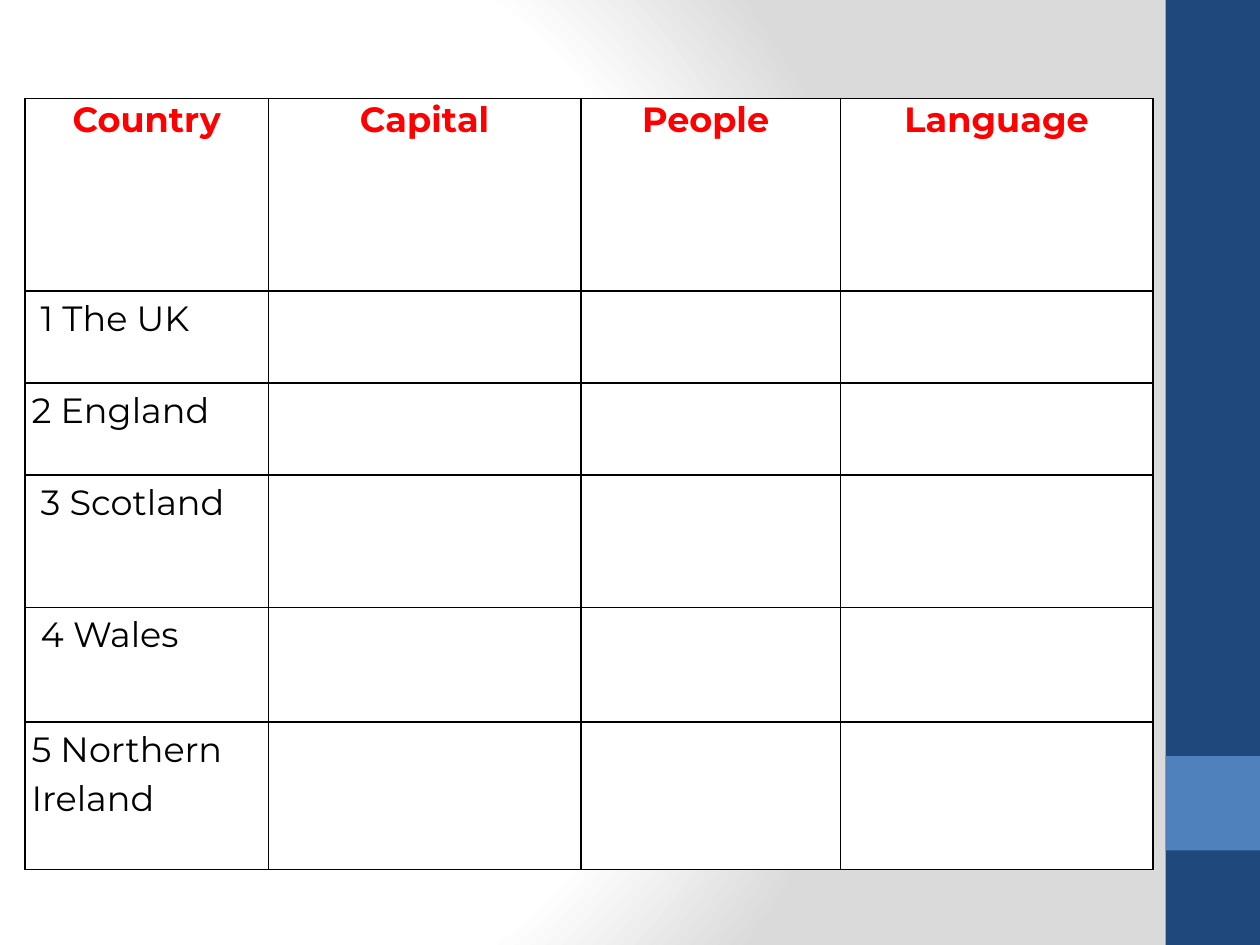
"""Build a slide with a table of countries to fill in."""
from lxml import etree
from pptx import Presentation
from pptx.dml.color import RGBColor
from pptx.enum.shapes import MSO_SHAPE
from pptx.enum.text import PP_ALIGN
from pptx.oxml import parse_xml
from pptx.oxml.ns import nsdecls, qn
from pptx.util import Inches, Pt

RECT = MSO_SHAPE.RECTANGLE
CENTER = PP_ALIGN.CENTER
LEFT = PP_ALIGN.LEFT

FONT = "Montserrat"
HEADS = ["Country", "Capital", "People ", "Language"]
LANDS = [" 1 The UK", "2 England", " 3 Scotland", " 4 Wales", "5 Northern Ireland"]
COLS = [1.93, 2.48, 2.06, 2.48]
ROWS = [1.53, 0.73, 0.73, 1.05, 0.91, 1.17]
BARS = [(0, 7.5, "1F497D"), (6, 0.75, "4F81BD")]
STOPS = [(0, "FFFFFF"), (75, "FFFFFF"), (100, "DADADA")]
SIDES = ["lnL", "lnR", "lnT", "lnB"]


def paint(fill, color):
    fill.solid()
    fill.fore_color.rgb = RGBColor.from_string(color)


def shade(slide):
    slide.background.fill.gradient()
    grad = slide.element.find(".//" + qn("a:gradFill"))
    stops = "".join(
        f'<a:gs pos="{pos * 1000}"><a:srgbClr val="{color}"/></a:gs>' for pos, color in STOPS
    )
    new = parse_xml(
        f'<a:gradFill {nsdecls("a")} rotWithShape="1"><a:gsLst>{stops}</a:gsLst>'
        '<a:path path="circle"><a:fillToRect l="20000" t="50000" r="100000" b="50000"/>'
        "</a:path></a:gradFill>"
    )
    grad.getparent().replace(grad, new)


def add_bar(slide, top, height, color):
    bar = slide.shapes.add_shape(RECT, Inches(9.25), Inches(top), Inches(0.75), Inches(height))
    bar.shadow.inherit = False
    paint(bar.fill, color)
    bar.line.fill.background()


def edge(cell):
    props = cell._tc.get_or_add_tcPr()
    for spot, side in enumerate(SIDES):
        line = etree.Element(qn("a:" + side), w=str(Pt(1)))
        fill = etree.SubElement(line, qn("a:solidFill"))
        etree.SubElement(fill, qn("a:srgbClr"), val="000000")
        props.insert(spot, line)


def write(cell, text, head):
    cell.margin_left = cell.margin_right = Inches(0.05)
    cell.margin_top = cell.margin_bottom = 0
    cell.text = text
    para = cell.text_frame.paragraphs[0]
    para.alignment = CENTER if head else LEFT
    para.line_spacing = 1.0 if head else 1.15
    para.font.name = FONT
    para.font.size = Pt(20)
    para.font.bold = head
    para.font.color.rgb = RGBColor.from_string("FF0000" if head else "000000")


def add_grid(slide):
    frame = slide.shapes.add_table(
        len(ROWS), len(COLS), Inches(0.2), Inches(0.78), Inches(sum(COLS)), Inches(sum(ROWS))
    )
    table = frame.table
    table.first_row = table.horz_banding = False
    for col, width in zip(table.columns, COLS):
        col.width = Inches(width)
    for row, height in zip(table.rows, ROWS):
        row.height = Inches(height)
    for cell in table.iter_cells():
        paint(cell.fill, "FFFFFF")
        edge(cell)
    for col, text in enumerate(HEADS):
        write(table.cell(0, col), text, True)
    for row, text in enumerate(LANDS, 1):
        write(table.cell(row, 0), text, False)


def main():
    deck = Presentation()
    deck.slide_width, deck.slide_height = Inches(10), Inches(7.5)
    slide = deck.slides.add_slide(deck.slide_layouts[6])
    shade(slide)
    for bar in BARS:
        add_bar(slide, *bar)
    add_grid(slide)
    deck.save("out.pptx")


if __name__ == "__main__":
    main()
